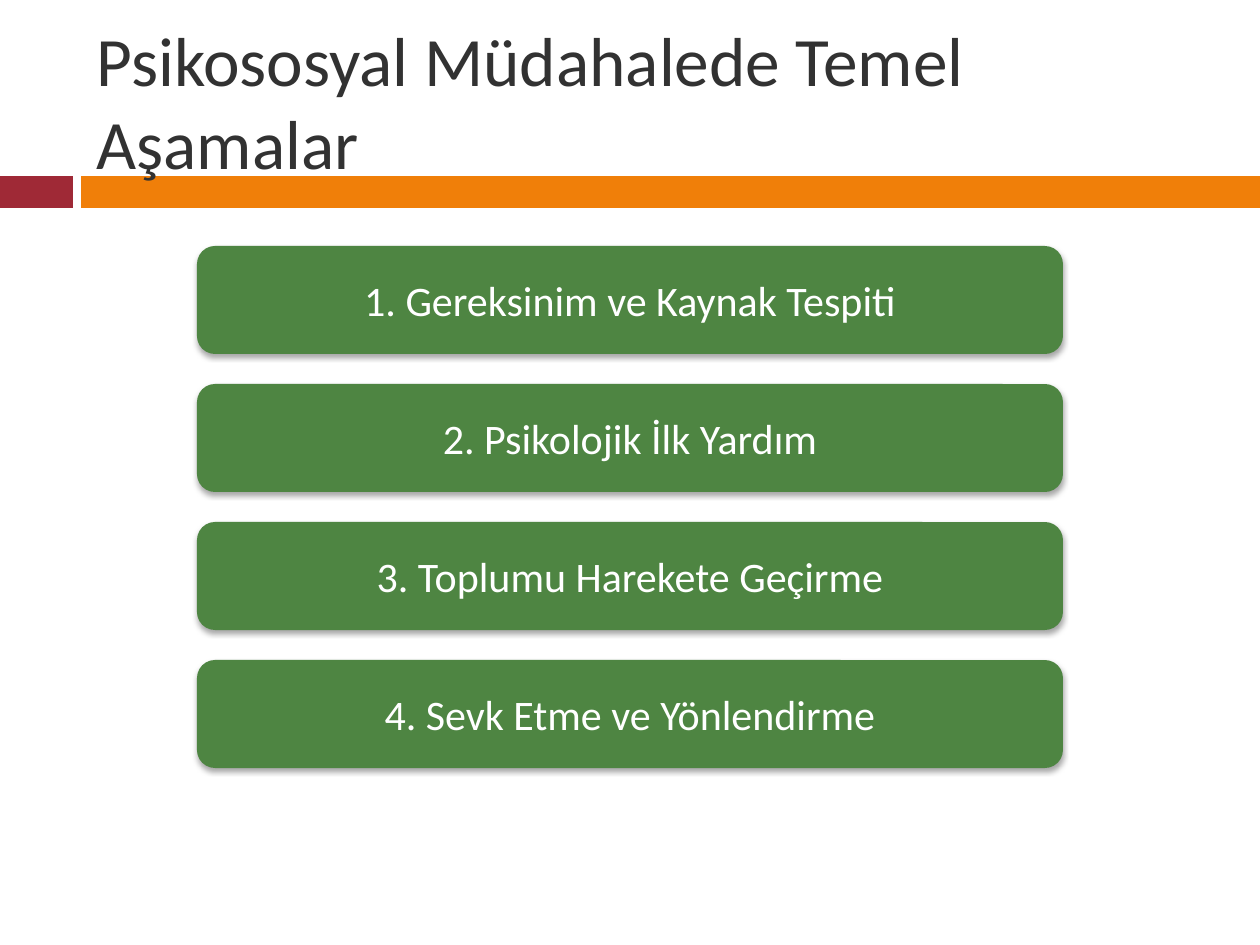
from lxml.etree import SubElement
from pptx import Presentation
from pptx.dml.color import RGBColor
from pptx.enum.shapes import MSO_SHAPE as Shape
from pptx.enum.text import MSO_ANCHOR as Anchor, MSO_AUTO_SIZE as AutoSize, PP_ALIGN as Align
from pptx.oxml.ns import qn
from pptx.util import Emu, Pt

RED = RGBColor(0x9F, 0x29, 0x36)
ORANGE = RGBColor(0xF0, 0x7F, 0x09)
GREEN = RGBColor(0x4E, 0x85, 0x42)
CHARCOAL = RGBColor(0x32, 0x32, 0x32)
WHITE = RGBColor(0xFF, 0xFF, 0xFF)

STAGES = [
    "1. Gereksinim ve Kaynak Tespiti",
    "2. Psikolojik İlk Yardım",
    "3. Toplumu Harekete Geçirme",
    "4. Sevk Etme ve Yönlendirme",
]


def px(length):
    return Emu(round(length * 914400 / 126))


def write(frame, text, size, color, align=Align.LEFT, font="Calibri"):
    frame.word_wrap = True
    frame.auto_size = AutoSize.NONE
    frame.vertical_anchor = Anchor.MIDDLE
    paragraph = frame.paragraphs[0]
    paragraph.alignment = align
    run = paragraph.add_run()
    run.text = text
    run.font.name = font
    run.font.size = Pt(size)
    run.font.color.rgb = color


class StageSlide:
    """Holds the slide and draws its title, bands and stage boxes."""

    title_size = 39.6
    stage_size = 24

    def __init__(self, deck):
        self.slide = deck.slides.add_slide(deck.slide_layouts[5])

    def band(self, left, top, width, height, color, outline=Shape.RECTANGLE):
        band = self.slide.shapes.add_shape(outline, px(left), px(top), px(width), px(height))
        band.shadow.inherit = False
        band.fill.solid()
        band.fill.fore_color.rgb = color
        band.line.fill.background()
        return band

    def title(self, text, left, top, width, height):
        title = self.slide.shapes.title
        title.left, title.top, title.width, title.height = map(px, (left, top, width, height))
        write(title.text_frame, text, self.title_size, CHARCOAL)
        self.slide.shapes._spTree.append(title._element)

    def stage(self, text, left, top, width, height):
        stage = self.band(left, top, width, height, GREEN, Shape.FLOWCHART_ALTERNATE_PROCESS)
        write(stage.text_frame, text, self.stage_size, WHITE, Align.CENTER)
        effects = stage._element.spPr.find(qn("a:effectLst"))
        shadow = SubElement(effects, qn("a:outerShdw"), blurRad=str(Pt(3)), dist=str(Pt(2)),
                            dir="5400000", rotWithShape="0")
        black = SubElement(shadow, qn("a:srgbClr"), val="000000")
        SubElement(black, qn("a:alpha"), val="35000")


def main():
    deck = Presentation()
    deck.slide_width, deck.slide_height = px(1260), px(945)
    page = StageSlide(deck)
    page.band(0, 176, 73, 32, RED)
    page.band(81, 176, 1179, 32, ORANGE)
    page.title("Psikososyal Müdahalede Temel Aşamalar", 84, 32, 1124, 136)
    for index, stage in enumerate(STAGES):
        page.stage(stage, 197, 246 + 138 * index, 866, 108)
    deck.save("out.pptx")


if __name__ == "__main__":
    main()
